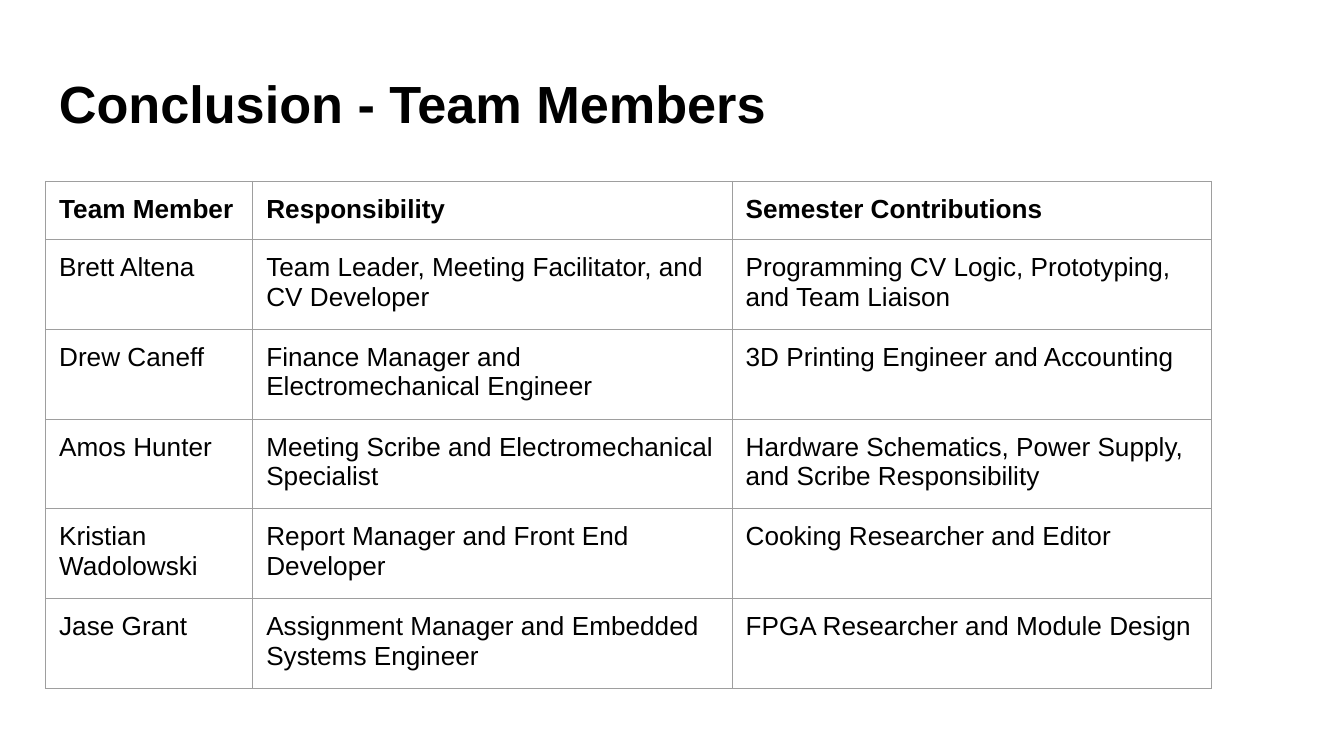
from dataclasses import dataclass

from lxml.etree import SubElement
from pptx import Presentation
from pptx.dml.color import RGBColor
from pptx.enum.text import MSO_ANCHOR
from pptx.oxml.ns import qn
from pptx.util import Pt


@dataclass(frozen=True)
class Theme:
    font: str = "Arial"
    ink: str = "000000"
    background: str = "FFFFFF"
    grid: str = "9E9E9E"
    title_size: int = 28
    body_size: int = 14
    grid_width: float = 0.75
    inset: float = 7.2


theme = Theme()


def write(paragraph, text, size, bold):
    run = paragraph.add_run()
    run.text = text
    run.font.name = theme.font
    run.font.size = Pt(size)
    run.font.bold = bold
    run.font.color.rgb = RGBColor.from_string(theme.ink)


def draw_borders(cell):
    properties = cell._tc.get_or_add_tcPr()
    for side in ("a:lnL", "a:lnR", "a:lnT", "a:lnB"):
        border = SubElement(properties, qn(side), w=str(Pt(theme.grid_width)))
        fill = SubElement(border, qn("a:solidFill"))
        SubElement(fill, qn("a:srgbClr"), val=theme.grid)


members = [
    ("Team Member", "Responsibility", "Semester Contributions"),
    ("Brett Altena", "Team Leader, Meeting Facilitator, and CV Developer",
     "Programming CV Logic, Prototyping, and Team Liaison"),
    ("Drew Caneff", "Finance Manager and Electromechanical Engineer",
     "3D Printing Engineer and Accounting"),
    ("Amos Hunter", "Meeting Scribe and Electromechanical Specialist",
     "Hardware Schematics, Power Supply, and Scribe Responsibility"),
    ("Kristian Wadolowski", "Report Manager and Front End Developer",
     "Cooking Researcher and Editor"),
    ("Jase Grant", "Assignment Manager and Embedded Systems Engineer",
     "FPGA Researcher and Module Design"),
]
column_widths = [111, 256.8, 256.8]
row_heights = [30.3] + [45.85] * (len(members) - 1)
left = 24.5

presentation = Presentation()
presentation.slide_width = Pt(720)
presentation.slide_height = Pt(405)
slide = presentation.slides.add_slide(presentation.slide_layouts[6])
slide.background.fill.solid()
slide.background.fill.fore_color.rgb = RGBColor.from_string(theme.background)

title = slide.shapes.add_textbox(Pt(left), Pt(31), Pt(671), Pt(45.4)).text_frame
title.word_wrap = True
title.vertical_anchor = MSO_ANCHOR.TOP
title.margin_left = title.margin_right = Pt(theme.inset)
title.margin_top = title.margin_bottom = Pt(theme.inset)
write(title.paragraphs[0], "Conclusion - Team Members", theme.title_size, True)

team = slide.shapes.add_table(
    len(members), len(column_widths), Pt(left), Pt(97.2),
    Pt(sum(column_widths)), Pt(sum(row_heights))).table
team.horz_banding = False
for column, width in zip(team.columns, column_widths):
    column.width = Pt(width)

for row_index, (member, height) in enumerate(zip(members, row_heights)):
    team.rows[row_index].height = Pt(height)
    for column_index, text in enumerate(member):
        cell = team.cell(row_index, column_index)
        cell.margin_left = cell.margin_right = Pt(theme.inset)
        cell.margin_top = cell.margin_bottom = Pt(theme.inset)
        draw_borders(cell)
        cell.fill.background()
        write(cell.text_frame.paragraphs[0], text, theme.body_size, row_index == 0)

presentation.save("out.pptx")
